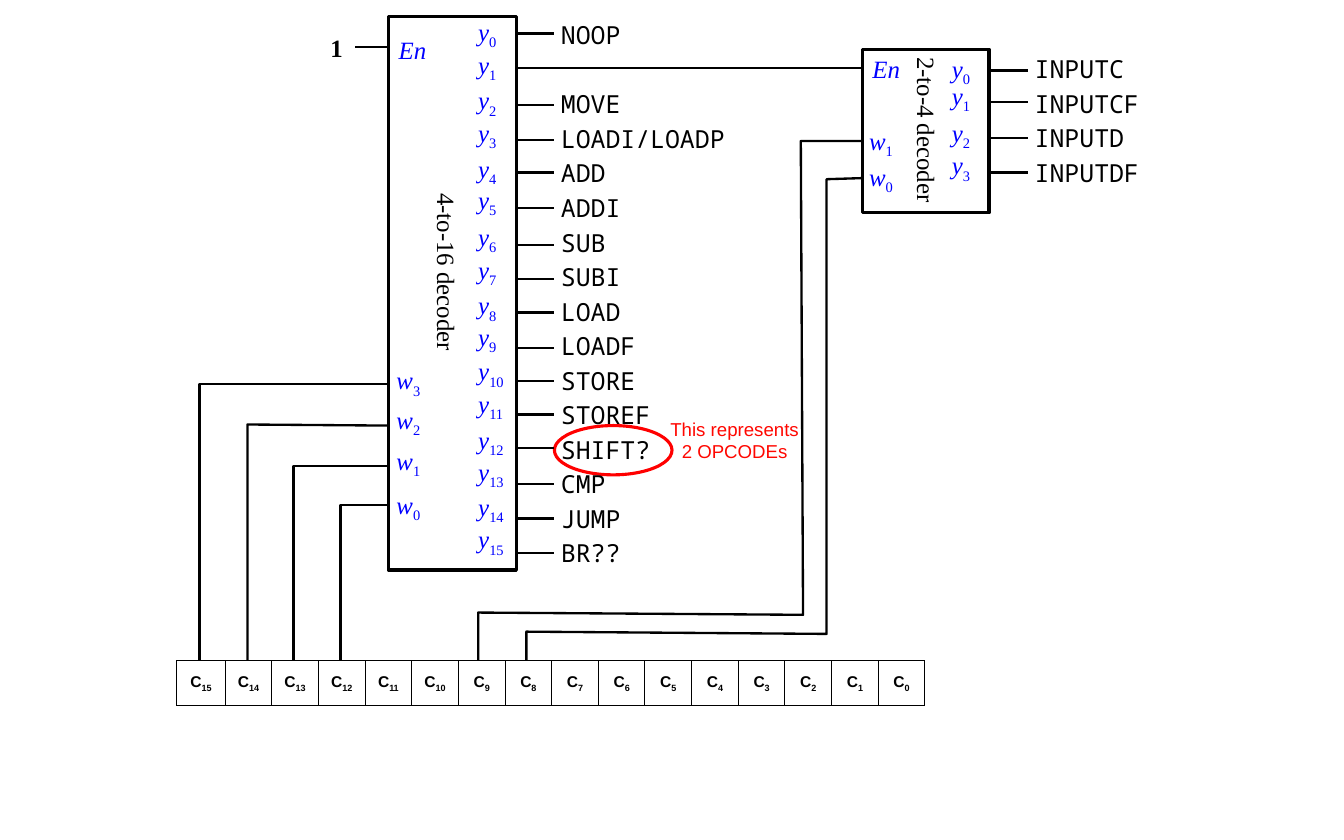
from dataclasses import dataclass

from lxml.etree import SubElement
from pptx import Presentation
from pptx.dml.color import RGBColor
from pptx.enum.shapes import MSO_CONNECTOR, MSO_SHAPE
from pptx.enum.text import MSO_ANCHOR, MSO_AUTO_SIZE, PP_ALIGN
from pptx.oxml.ns import qn
from pptx.util import Inches, Pt


@dataclass(frozen=True)
class Theme:
    black: RGBColor = RGBColor(0, 0, 0)
    port: RGBColor = RGBColor(0, 0, 0xFF)
    note: RGBColor = RGBColor(0xFF, 0x07, 0)
    ring: RGBColor = RGBColor(0xFF, 0, 0)
    serif: str = "Times New Roman"
    mono: str = "Noto Sans Mono"
    sans: str = "Arial"
    label_size: Pt = Pt(16)
    note_size: Pt = Pt(12)
    bit_size: Pt = Pt(10)
    wire: Pt = Pt(1.5)
    box: Pt = Pt(2.25)
    ellipse: Pt = Pt(2)


THEME = Theme()


def add_label(box, lines, font, color, size=THEME.label_size, inset=0, wrap=False):
    """Place lines of text; each line is a tuple of a base and an optional subscript."""
    label = slide.shapes.add_textbox(*map(Inches, box))
    frame = label.text_frame
    frame.word_wrap = wrap
    frame.auto_size = MSO_AUTO_SIZE.SHAPE_TO_FIT_TEXT
    frame.margin_left = frame.margin_right = Inches(inset)
    frame.margin_top = frame.margin_bottom = Inches(inset / 2)
    write_lines(frame, lines, font, color, size)
    return label


def write_lines(frame, lines, font, color, size):
    for index, parts in enumerate(lines):
        paragraph = frame.add_paragraph() if index else frame.paragraphs[0]
        for level, part in enumerate(parts):
            run = paragraph.add_run()
            run.text = part
            run.font.name = font
            run.font.size = size
            run.font.color.rgb = color
            if level:
                run.font._element.set("baseline", "-25000")


deck = Presentation()
deck.slide_width, deck.slide_height = Inches(12), Inches(7.5)
slide = deck.slides.add_slide(deck.slide_layouts[6])

# Instruction register
BITS, TOP_BIT_WIDTH, REGISTER_WIDTH = 16, 0.43, 6.68
register = slide.shapes.add_table(
    1, BITS, Inches(1.58), Inches(5.9), Inches(REGISTER_WIDTH), Inches(0.4)
).table
register.first_row = register.horz_banding = False
for column, bit in enumerate(reversed(range(BITS))):
    rest = (REGISTER_WIDTH - TOP_BIT_WIDTH) / (BITS - 1)
    register.columns[column].width = Inches(rest if column else TOP_BIT_WIDTH)
    cell = register.cell(0, column)
    cell.vertical_anchor = MSO_ANCHOR.MIDDLE
    write_lines(cell.text_frame, [("C", str(bit))], THEME.sans, THEME.black, THEME.bit_size)
    paragraph = cell.text_frame.paragraphs[0]
    paragraph.alignment = PP_ALIGN.CENTER
    for run in paragraph.runs:
        run.font.bold = True
    properties = cell._tc.get_or_add_tcPr()
    for side in ("a:lnL", "a:lnR", "a:lnT", "a:lnB"):
        border = SubElement(properties, qn(side), w=str(Pt(0.75)))
        fill = SubElement(border, qn("a:solidFill"))
        SubElement(fill, qn("a:srgbClr"), val=str(THEME.black))
    cell.fill.background()

# Decoder outlines and the ring around the doubtful opcode
for kind, box, color, width in (
    (MSO_SHAPE.RECTANGLE, (3.47, 0.15, 1.14, 4.94), THEME.black, THEME.box),
    (MSO_SHAPE.RECTANGLE, (7.7, 0.44, 1.13, 1.46), THEME.black, THEME.box),
    (MSO_SHAPE.OVAL, (4.95, 3.8, 1.05, 0.44), THEME.ring, THEME.ellipse),
):
    outline = slide.shapes.add_shape(kind, *map(Inches, box))
    outline.shadow.inherit = False
    outline.fill.background()
    outline.line.color.rgb = color
    outline.line.width = width

for box, name in (
    ((3.21, 2.37, 1.56, 0.27), "4-to-16 decoder"),
    ((7.6, 1.05, 1.35, 0.27), "2-to-4 decoder"),
):
    add_label(box, [(name,)], THEME.serif, THEME.black, wrap=True).rotation = 90

# Ports: letter, left edge, width, and the top of each numbered label
OPCODE_PORTS = (0.15, 0.44, 0.76, 1.05, 1.37, 1.65, 1.98, 2.27,
                2.59, 2.87, 3.18, 3.47, 3.79, 4.08, 4.39, 4.68)
for letter, left, width, tops in (
    ("y", 4.27, 0.24, OPCODE_PORTS),
    ("w", 3.54, 0.29, (4.37, 3.98, 3.61, 3.26)),
    ("y", 8.5, 0.24, (0.48, 0.72, 1.05, 1.34)),
    ("w", 7.76, 0.29, (1.44, 1.12)),
):
    for number, top in enumerate(tops):
        label_width = width + (0.08 if number > 9 else 0)
        port = add_label((left, top, label_width, 0.27), [(letter, str(number))],
                         THEME.serif, THEME.port)
        port.text_frame.paragraphs[0].runs[0].font.italic = True

for left, top in ((3.56, 0.31), (7.79, 0.48)):
    enable = add_label((left, top, 0.25, 0.27), [("En",)], THEME.serif, THEME.port)
    enable.text_frame.paragraphs[0].runs[0].font.italic = True
always_on = add_label((2.95, 0.29, 0.17, 0.27), [("1",)], THEME.serif, THEME.black)
always_on.text_frame.paragraphs[0].runs[0].font.bold = True

# Straight wires: start, end, and their heights
OPCODE_PINS = (0.3, 0.94, 1.25, 1.54, 1.86, 2.19, 2.49, 2.79,
               3.11, 3.4, 3.7, 4, 4.32, 4.63, 4.94)
for start, end, heights in (
    (3.46, 3.17, (0.42,)),
    (4.61, 7.7, (0.61,)),
    (4.61, 4.95, OPCODE_PINS),
    (8.84, 9.18, (0.63, 0.91, 1.23, 1.54)),
):
    for height in heights:
        wire = slide.shapes.add_connector(
            MSO_CONNECTOR.STRAIGHT,
            Inches(start), Inches(height), Inches(end), Inches(height))
        wire.line.color.rgb = THEME.black
        wire.line.width = THEME.wire
        SubElement(wire._element.spPr, qn("a:effectLst"))

# Bent wires from the decoders down to the register
REGISTER_TOP = 5.9
for points in (
    ((3.47, 3.43), (1.78, 3.43), (1.78, REGISTER_TOP)),
    ((3.48, 3.8), (2.21, 3.79), (2.21, REGISTER_TOP)),
    ((3.46, 4.16), (2.62, 4.16), (2.62, REGISTER_TOP)),
    ((3.48, 4.51), (3.04, 4.51), (3.04, REGISTER_TOP)),
    ((7.69, 1.26), (7.15, 1.26), (7.17, 5.49), (4.27, 5.47), (4.27, REGISTER_TOP)),
    ((7.7, 1.59), (7.38, 1.6), (7.38, 5.66), (4.7, 5.64), (4.7, REGISTER_TOP)),
):
    corners = [(Inches(x), Inches(y)) for x, y in points]
    builder = slide.shapes.build_freeform(*corners[0])
    builder.add_line_segments(corners[1:], close=False)
    bend = builder.convert_to_shape()
    bend.shadow.inherit = False
    bend.fill.background()
    bend.line.color.rgb = THEME.black
    bend.line.width = THEME.wire

# Opcode names
OPCODES = ("NOOP", "MOVE", "LOADI/LOADP", "ADD", "ADDI", "SUB", "SUBI", "LOAD",
           "LOADF", "STORE", "STOREF", "SHIFT?", "CMP", "JUMP", "BR??")
INPUTS = ("INPUTC", "INPUTCF", "INPUTD", "INPUTDF")
for box, names in (((4.91, 0.13, 1.69, 5.04), OPCODES), ((9.14, 0.43, 1.15, 1.3), INPUTS)):
    listing = add_label(box, [(name,) for name in names], THEME.mono, THEME.black, inset=0.1)
    for paragraph in listing.text_frame.paragraphs:
        # The output after NOOP feeds the second decoder, so its row stays open
        paragraph.space_after = Pt(25.2 if paragraph.text == "NOOP" else 3)

remark = add_label((5.88, 3.68, 1.36, 0.51), [("This represents",), ("2 OPCODEs",)],
                   THEME.sans, THEME.note, THEME.note_size, inset=0.1)
for paragraph in remark.text_frame.paragraphs:
    paragraph.alignment = PP_ALIGN.CENTER

deck.save("out.pptx")
